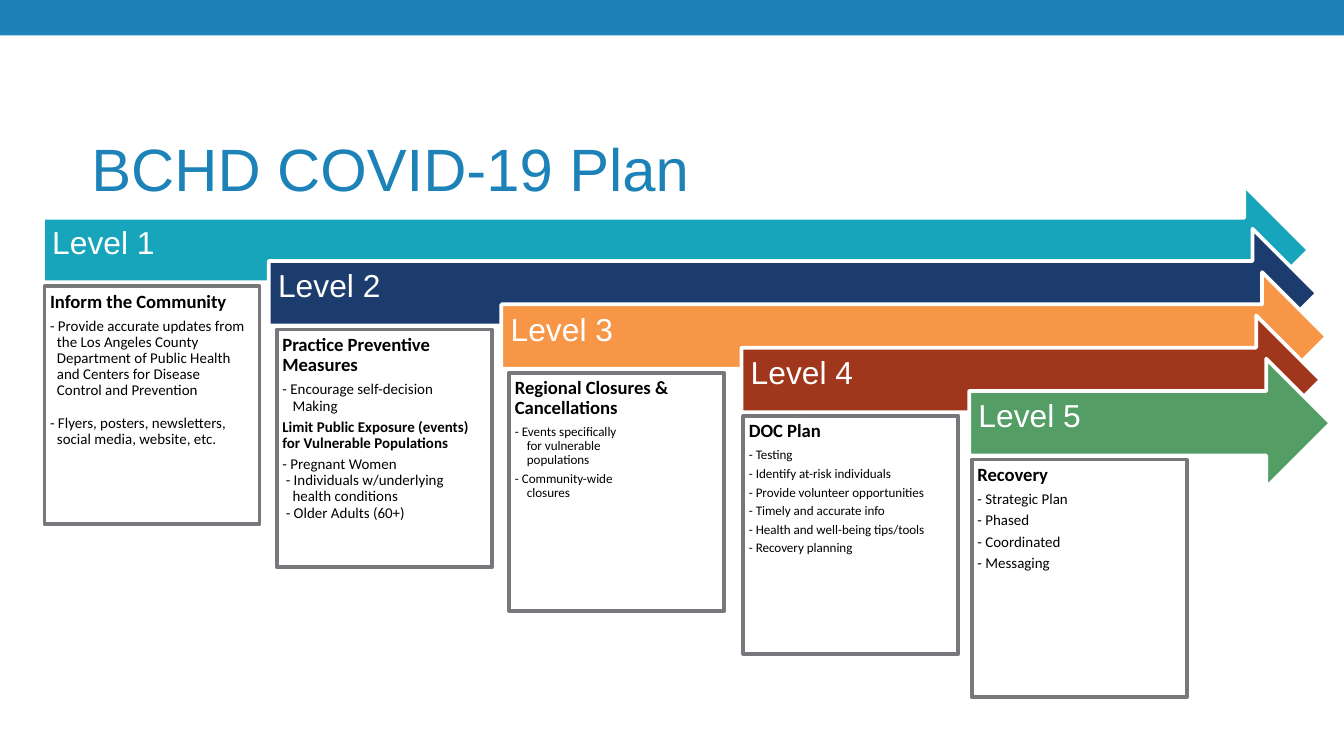
from pptx import Presentation
from pptx.dml.color import RGBColor
from pptx.enum.shapes import MSO_SHAPE
from pptx.enum.text import MSO_ANCHOR, PP_ALIGN
from pptx.util import Pt

COLORS = {"blue": "1C82B8", "teal": "17A5BB", "navy": "1C3C6D", "orange": "F79646",
          "red": "A0371D", "green": "549E66", "white": "FFFFFF", "gray": "78777B",
          "black": "000000"}

TITLE = "BCHD COVID-19 Plan"

# Each item is its text (\v breaks a line) and any formats that differ from the level's
LEVELS = [
    {"color": "teal", "arrow": (23, 678.2), "box": 23.8, "size": 8, "hang": 3.7,
     "heading": "Inform the Community",
     "items": [
         ("- Provide accurate updates from\vthe Los Angeles County\v"
          "Department of Public Health\vand Centers for Disease\vControl and Prevention",
          {"after": 8.8}),
         ("- Flyers, posters, newsletters,\vsocial media, website, etc.", {})]},
    {"color": "navy", "arrow": (144, 561.6), "box": 148.3, "size": 8, "hang": 5.4,
     "heading": "Practice Preventive Measures",
     "items": [
         ("- Encourage self-decision\vMaking", {}),
         ("Limit Public Exposure (events) for Vulnerable Populations",
          {"bold": True, "hang": 0}),
         ("- Pregnant Women", {"after": 0}),
         ("- Individuals w/underlying\vhealth conditions", {"after": 0, "start": 1.8}),
         ("- Older Adults (60+)", {"start": 1.8})]},
    {"color": "orange", "arrow": (268.6, 442.1), "box": 272.9, "size": 7, "hang": 6.4,
     "heading": "Regional Closures &\vCancellations",
     "items": [
         ("- Events specifically\vfor vulnerable\vpopulations", {}),
         ("- Community-wide\vclosures", {})]},
    {"color": "red", "arrow": (397.2, 310.3), "box": 398.2, "size": 7, "hang": 0,
     "heading": "DOC Plan",
     "items": [(text, {}) for text in (
         "- Testing", "- Identify at-risk individuals", "- Provide volunteer opportunities",
         "- Timely and accurate info", "- Health and well-being tips/tools",
         "- Recovery planning")]},
    {"color": "green", "arrow": (519.2, 193.7), "box": 520.6, "size": 8, "hang": 0,
     "heading": "Recovery",
     "items": [(text, {}) for text in (
         "- Strategic Plan", "- Phased", "- Coordinated", "- Messaging")]},
]

ARROW_TOP, ARROW_HEIGHT = 99.4, 69.1
BOX_TOP, BOX_WIDTH, BOX_HEIGHT = 153.4, 115.2, 127.4
STEP = 23.2
SPACING = 0.35  # gap after a paragraph, as a share of its text size


def rgb(name):
    return RGBColor.from_string(COLORS[name])


def set_frame(frame, margins, anchor):
    sides = ("margin_left", "margin_top", "margin_right", "margin_bottom")
    formats = {side: Pt(value) for side, value in zip(sides, margins)}
    formats.update(word_wrap=True, vertical_anchor=anchor)
    for name, value in formats.items():
        setattr(frame, name, value)


def add_block(kind, left, top, width, height, fill, line=None):
    block = slide.shapes.add_shape(kind, Pt(left), Pt(top), Pt(width), Pt(height))
    block.shadow.inherit = False
    block.fill.solid()
    block.fill.fore_color.rgb = rgb(fill)
    if line:
        block.line.color.rgb = rgb(line)
        block.line.width = Pt(2)
    else:
        block.line.fill.background()
    return block


def write(paragraph, text, font, size, color, bold=False, after=None, hang=0, start=0):
    paragraph.text = text
    after = SPACING * size if after is None else after
    formats = {"alignment": PP_ALIGN.LEFT, "line_spacing": 0.9, "space_after": Pt(after)}
    for name, value in formats.items():
        setattr(paragraph, name, value)
    for name, value in {"name": font, "size": Pt(size), "bold": bold}.items():
        setattr(paragraph.font, name, value)
    paragraph.font.color.rgb = rgb(color)
    if hang:
        properties = paragraph._p.get_or_add_pPr()
        properties.set("marL", str(Pt(hang)))
        properties.set("indent", str(Pt(start - hang)))


prs = Presentation()
prs.slide_width, prs.slide_height = Pt(720), Pt(405)
slide = prs.slides.add_slide(prs.slide_layouts[6])

# Top band and title
add_block(MSO_SHAPE.RECTANGLE, 0, 0, 720, 19, "blue")
title = slide.shapes.add_textbox(Pt(49), Pt(71.3), Pt(412.6), Pt(27.4)).text_frame
set_frame(title, (0, 10, 7.2, 0), MSO_ANCHOR.MIDDLE)
write(title.paragraphs[0], TITLE, "Arial", 32, "blue", after=0)
title.paragraphs[0].line_spacing = 1.0

# Staircase of arrows, each with its box of measures
for number, level in enumerate(LEVELS):
    drop = number * STEP
    left, width = level["arrow"]
    arrow = add_block(MSO_SHAPE.RIGHT_ARROW, left, ARROW_TOP + drop, width, ARROW_HEIGHT,
                      level["color"], "white").text_frame
    set_frame(arrow, (5, 5, 20, 11), MSO_ANCHOR.MIDDLE)
    write(arrow.paragraphs[0], f"Level {number + 1}", "Arial", 17, "white")

    box = add_block(MSO_SHAPE.RECTANGLE, level["box"], BOX_TOP + drop, BOX_WIDTH, BOX_HEIGHT,
                    "white", "gray").text_frame
    set_frame(box, (3, 3, 3, 3), MSO_ANCHOR.TOP)
    write(box.paragraphs[0], level["heading"], "Calibri", 10, "black", bold=True)
    for text, changes in level["items"]:
        formats = {"hang": level["hang"], **changes}
        write(box.add_paragraph(), text, "Calibri", level["size"], "black", **formats)

prs.save("out.pptx")
